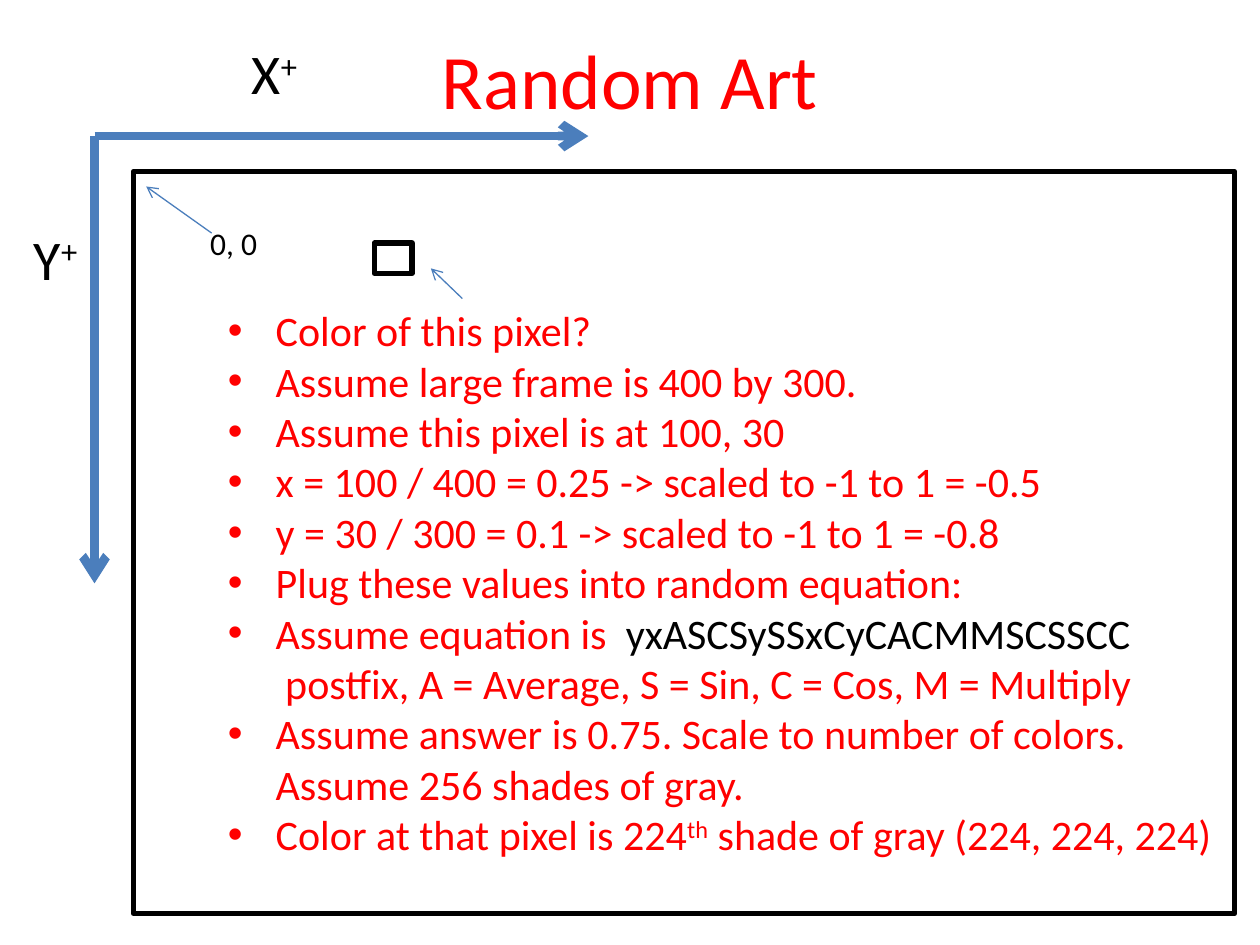
"""Builds the Random Art slide: a pixel in a frame, its axes and its colour steps."""
from dataclasses import dataclass

from lxml import etree
from pptx import Presentation
from pptx.dml.color import RGBColor
from pptx.enum.shapes import MSO_CONNECTOR, MSO_SHAPE
from pptx.enum.text import MSO_ANCHOR, MSO_AUTO_SIZE, PP_ALIGN
from pptx.oxml.ns import qn
from pptx.util import Emu, Pt

STRAIGHT, RECTANGLE = MSO_CONNECTOR.STRAIGHT, MSO_SHAPE.RECTANGLE
MIDDLE, TOP = MSO_ANCHOR.MIDDLE, MSO_ANCHOR.TOP
CENTER, LEFT = PP_ALIGN.CENTER, PP_ALIGN.LEFT
FIT, NO_FIT = MSO_AUTO_SIZE.SHAPE_TO_FIT_TEXT, MSO_AUTO_SIZE.NONE
EMU_PER_PX = 9144


@dataclass(frozen=True)
class Theme:
    font: str = "Calibri"
    red: str = "FF0000"
    black: str = "000000"
    blue: str = "4B7EBC"
    title_size: int = 44
    axis_size: int = 32
    step_size: int = 24
    origin_size: int = 18
    frame_line: float = 3
    axis_line: float = 5
    pointer_line: float = 0.75


THEME = Theme()
BREAK = "\n"
BLACK, RAISED = "black", "raised"
SLIDE_SIZE = (1000, 750)

TITLE = [["Random Art"]]
STEPS = [
    ["Color of this pixel?"],
    ["Assume large frame is 400 by 300."],
    ["Assume this pixel is at 100, 30"],
    ["x = 100 / 400 = 0.25 -> scaled to -1 to 1 = -0.5"],
    ["y = 30 / 300 = 0.1 -> scaled to -1 to 1 = -0.8"],
    ["Plug these values into random equation:"],
    ["Assume equation is  ", ("yxASCSySSxCyCACMMSCSSCC", BLACK), BREAK,
     " postfix, A = Average, S = Sin, C = Cos, M = Multiply"],
    ["Assume answer is 0.75. Scale to number of colors.", BREAK,
     "Assume 256 shades of gray."],
    ["Color at that pixel is 224", ("th", RAISED), " shade of gray (224, 224, 224)"],
]
STEP_INDENT = 38

FRAMES = [(106, 136, 874, 589), (297, 193, 30, 24)]
AXIS_ORIGIN = (75, 108)
AXIS_ENDS = [(467, 108), (75, 463)]
POINTERS = [((168, 185), (116, 148)), ((367, 237), (342, 213))]
LABELS = [
    ([["X", ("+", RAISED)]], (190, 26, 58, 64), THEME.axis_size),
    ([["Y", ("+", RAISED)]], (17, 173, 58, 64), THEME.axis_size),
    ([["0, 0"]], (157, 173, 58, 40), THEME.origin_size),
]


def px(*lengths):
    return [Emu(length * EMU_PER_PX) for length in lengths]


def color(code):
    return RGBColor.from_string(code)


def add_frame(slide, box):
    frame = slide.shapes.add_shape(RECTANGLE, *px(*box))
    frame.shadow.inherit = False
    frame.fill.background()
    frame.line.color.rgb = color(THEME.black)
    frame.line.width = Pt(THEME.frame_line)


def add_arrow(slide, start, end, width):
    arrow = slide.shapes.add_connector(STRAIGHT, *px(*start, *end))
    arrow.line.color.rgb = color(THEME.blue)
    arrow.line.width = Pt(width)
    etree.SubElement(arrow.line._get_or_add_ln(), qn("a:tailEnd"), type="arrow")
    etree.SubElement(arrow._element.spPr, qn("a:effectLst"))


def add_bullet(paragraph):
    properties = paragraph._p.get_or_add_pPr()
    indent = STEP_INDENT * EMU_PER_PX
    properties.set("marL", str(indent))
    properties.set("indent", str(-indent))
    etree.SubElement(properties, qn("a:buFont"), typeface="Arial")
    etree.SubElement(properties, qn("a:buChar"), char="•")


def add_piece(paragraph, piece, size, ink):
    if piece == BREAK:
        paragraph.add_line_break()
        return
    words, style = piece if isinstance(piece, tuple) else (piece, None)
    run = paragraph.add_run()
    run.text = words
    run.font.name = THEME.font
    run.font.size = Pt(size)
    run.font.color.rgb = color(THEME.black if style == BLACK else ink)
    if style == RAISED:
        run.font._element.set("baseline", "30000")


def add_text(slide, lines, box, size, ink, bullets=False, heading=False):
    frame = slide.shapes.add_textbox(*px(*box)).text_frame
    frame.word_wrap = heading
    frame.auto_size = NO_FIT if heading else FIT
    frame.vertical_anchor = MIDDLE if heading else TOP
    for number, pieces in enumerate(lines):
        paragraph = frame.add_paragraph() if number else frame.paragraphs[0]
        paragraph.alignment = CENTER if heading else LEFT
        if bullets:
            add_bullet(paragraph)
        for piece in pieces:
            add_piece(paragraph, piece, size, ink)


def main():
    deck = Presentation()
    deck.slide_width, deck.slide_height = px(*SLIDE_SIZE)
    slide = deck.slides.add_slide(deck.slide_layouts[6])
    add_text(slide, TITLE, (50, 0, 900, 125), THEME.title_size, THEME.red, heading=True)
    for box in FRAMES:
        add_frame(slide, box)
    add_text(slide, STEPS, (171, 237, 809, 454), THEME.step_size, THEME.red, bullets=True)
    for end in AXIS_ENDS:
        add_arrow(slide, AXIS_ORIGIN, end, THEME.axis_line)
    for label, box, size in LABELS:
        add_text(slide, label, box, size, THEME.black)
    for start, end in POINTERS:
        add_arrow(slide, start, end, THEME.pointer_line)
    deck.save("out.pptx")


if __name__ == "__main__":
    main()
